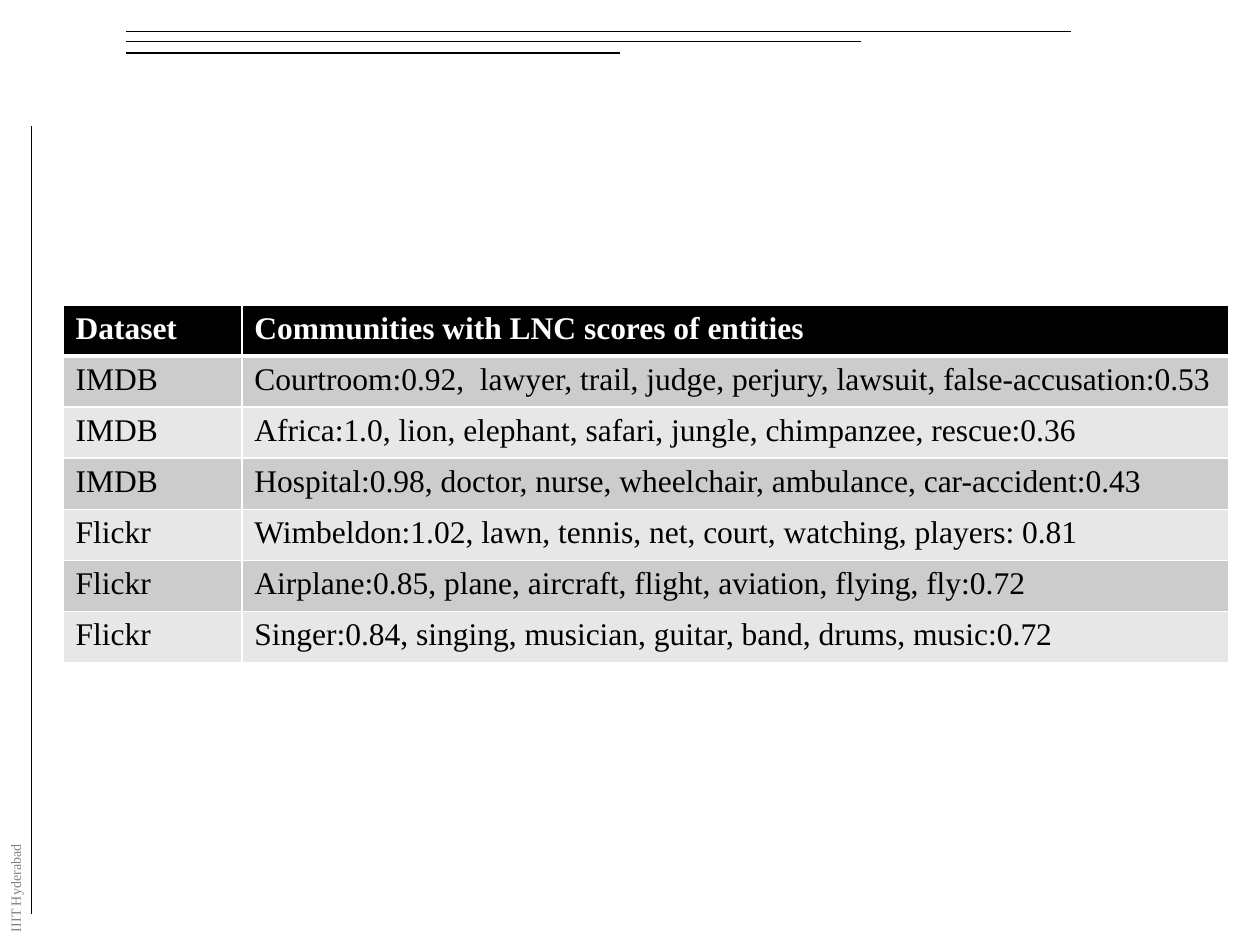
from lxml import etree
from pptx import Presentation
from pptx.dml.color import RGBColor
from pptx.enum.shapes import MSO_CONNECTOR
from pptx.oxml.ns import qn
from pptx.util import Inches, Pt

STRAIGHT = MSO_CONNECTOR.STRAIGHT
FONT = "Times New Roman"
COLORS = {
    "black": "000000",
    "white": "FFFFFF",
    "affiliation": "808080",
    "odd_row": "CCCCCC",
    "even_row": "E7E7E7",
}
RULES = [
    (1, 0.25, 8.5, 0.25),
    (1, 0.33, 6.83, 0.33),
    (1, 0.42, 4.92, 0.42),
    (0.25, 1, 0.25, 7.25),
]
COLUMN_WIDTHS = [1.42, 7.83]
TABLE_HEIGHT = 2.84
COMMUNITIES = [
    ("Dataset", "Communities with LNC scores of entities"),
    ("IMDB", "Courtroom:0.92,  lawyer, trail, judge, perjury, lawsuit, false-accusation:0.53"),
    ("IMDB", "Africa:1.0, lion, elephant, safari, jungle, chimpanzee, rescue:0.36"),
    ("IMDB", "Hospital:0.98, doctor, nurse, wheelchair, ambulance, car-accident:0.43"),
    ("Flickr", "Wimbeldon:1.02, lawn, tennis, net, court, watching, players: 0.81"),
    ("Flickr", "Airplane:0.85, plane, aircraft, flight, aviation, flying, fly:0.72"),
    ("Flickr", "Singer:0.84, singing, musician, guitar, band, drums, music:0.72"),
]


def color(name):
    return RGBColor.from_string(COLORS[name])


def write(paragraph, text, size, color_name, bold=False):
    paragraph.text = text
    font = paragraph.font
    font.name = FONT
    font.size = Pt(size)
    font.bold = bold
    font.color.rgb = color(color_name)


def add_rule(slide, x1, y1, x2, y2):
    rule = slide.shapes.add_connector(
        STRAIGHT, Inches(x1), Inches(y1), Inches(x2), Inches(y2))
    rule.line.color.rgb = color("black")
    rule.line.width = Pt(0.75)
    etree.SubElement(rule._element.spPr, qn("a:effectLst"))


def add_affiliation(slide, text):
    affiliation = slide.shapes.add_textbox(
        Inches(-0.34), Inches(6.92), Inches(0.92), Inches(0.23))
    affiliation.rotation = 270
    affiliation.text_frame.word_wrap = True
    write(affiliation.text_frame.paragraphs[0], text, 8, "affiliation")


def set_border(cell, side, width):
    border = etree.SubElement(
        cell._tc.get_or_add_tcPr(), qn(f"a:ln{side}"), w=str(Pt(width)))
    fill = etree.SubElement(border, qn("a:solidFill"))
    etree.SubElement(fill, qn("a:srgbClr"), val=COLORS["white"])


def style_cell(cell, row, text):
    header = row == 0
    widths = {"L": 1, "R": 1, "T": 3 if row == 1 else 1, "B": 3 if header else 1}
    for side, width in widths.items():
        set_border(cell, side, width)
    cell.fill.solid()
    band = "odd_row" if row % 2 else "even_row"
    cell.fill.fore_color.rgb = color("black" if header else band)
    write(cell.text_frame.paragraphs[0], text, 18,
          "white" if header else "black", header)


def add_community_table(slide):
    table = slide.shapes.add_table(
        len(COMMUNITIES), len(COLUMN_WIDTHS), Inches(0.5), Inches(2.42),
        Inches(sum(COLUMN_WIDTHS)), Inches(TABLE_HEIGHT)).table
    for column, width in zip(table.columns, COLUMN_WIDTHS):
        column.width = Inches(width)
    for row, texts in enumerate(COMMUNITIES):
        for column, text in enumerate(texts):
            style_cell(table.cell(row, column), row, text)


def main():
    presentation = Presentation()
    presentation.slide_width = Inches(10)
    presentation.slide_height = Inches(7.5)
    slide = presentation.slides.add_slide(presentation.slide_layouts[6])
    for rule in RULES:
        add_rule(slide, *rule)
    add_affiliation(slide, "IIIT Hyderabad")
    add_community_table(slide)
    presentation.save("out.pptx")


if __name__ == "__main__":
    main()
